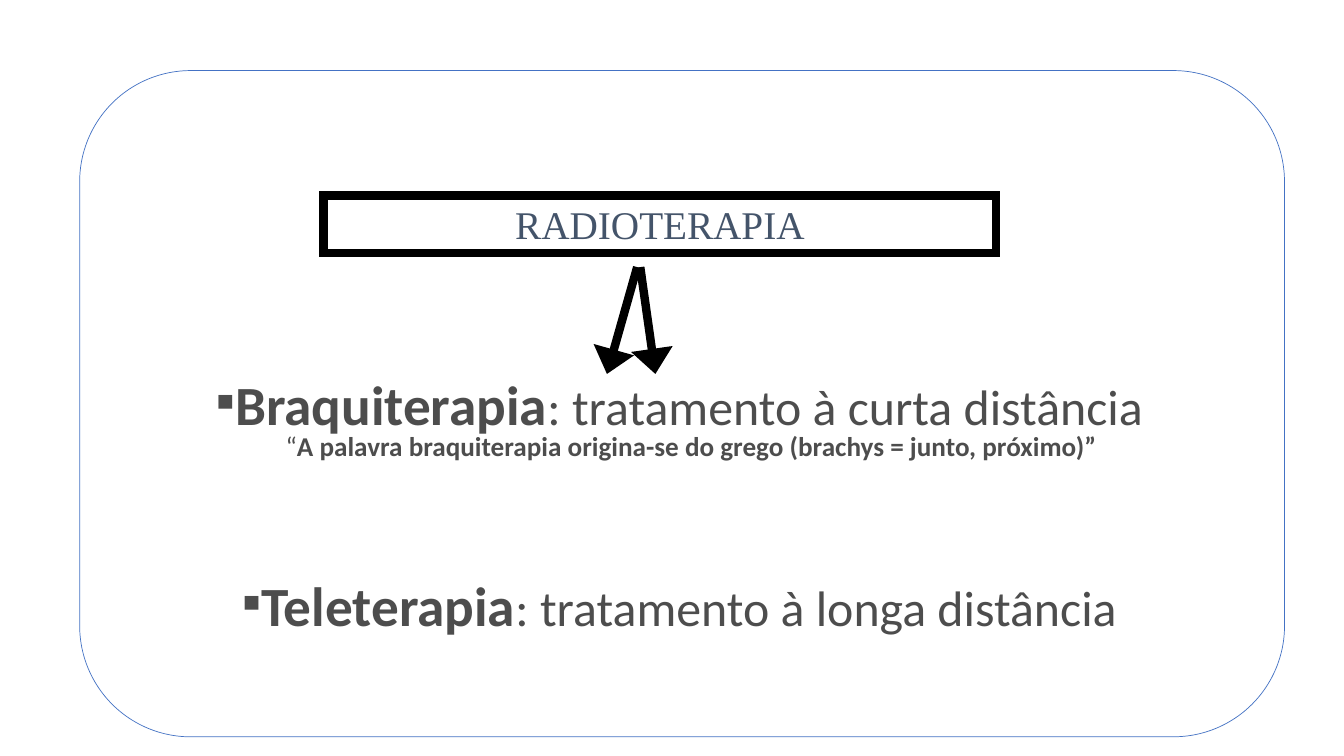
"""Build the slide on the two kinds of radiotherapy."""
from lxml import etree
from pptx import Presentation
from pptx.dml.color import RGBColor
from pptx.enum import shapes, text
from pptx.oxml import ns
from pptx.util import Inches, Pt

WHITE = RGBColor(0xFF, 0xFF, 0xFF)
BLACK = RGBColor(0, 0, 0)
BLUE = RGBColor(0x44, 0x72, 0xC4)
SLATE = RGBColor(0x44, 0x54, 0x6A)
GREY = RGBColor(0x4D, 0x4D, 0x4D)

presentation = Presentation()
presentation.slide_width = Inches(13.33)
presentation.slide_height = Inches(7.5)
slide = presentation.slides.add_slide(presentation.slide_layouts[1])
radiotherapy = slide.shapes.title
therapies = slide.placeholders[1]

border = slide.shapes.add_shape(
    shapes.MSO_SHAPE.ROUNDED_RECTANGLE,
    Inches(0.79), Inches(0.7), Inches(11.95), Inches(6.61))
border.shadow.inherit = False
border.fill.solid()
border.fill.fore_color.rgb = WHITE
border.line.color.rgb = BLUE
border.line.width = Pt(0.5)
radiotherapy._element.addprevious(border._element)

radiotherapy.left, radiotherapy.top = Inches(3.21), Inches(1.94)
radiotherapy.width, radiotherapy.height = Inches(6.67), Inches(0.57)
radiotherapy.line.color.rgb = BLACK
radiotherapy.line.width = Pt(6)
etree.SubElement(radiotherapy.line._get_or_add_ln(), ns.qn("a:miter"), lim="800000")
radiotherapy.text_frame.auto_size = text.MSO_AUTO_SIZE.NONE
heading = radiotherapy.text_frame.paragraphs[0]
heading.alignment = text.PP_ALIGN.CENTER
heading_run = heading.add_run()
heading_run.text = "RADIOTERAPIA"
heading_run.font.name = "Times New Roman"
heading_run.font.size = Pt(28)
heading_run.font.color.rgb = SLATE

for start_x, end_x in ((6.32, 6.02), (6.35, 6.5)):
    branch = slide.shapes.add_connector(
        shapes.MSO_CONNECTOR.STRAIGHT,
        Inches(start_x), Inches(2.65), Inches(end_x), Inches(3.71))
    branch.line.color.rgb = BLACK
    branch.line.width = Pt(6)
    etree.SubElement(branch.line._get_or_add_ln(), ns.qn("a:tailEnd"),
                     type="triangle", w="lg", len="med")
    etree.SubElement(branch._element.spPr, ns.qn("a:effectLst"))

therapies.left, therapies.top = Inches(1.78), Inches(3.91)
therapies.width, therapies.height = Inches(9.92), Inches(2.7)
definitions = therapies.text_frame
definitions.auto_size = text.MSO_AUTO_SIZE.NONE
definitions.margin_top = definitions.margin_bottom = 0

lines = (
    ("▪", 0, 0, (("Braquiterapia", 39.5, True),
                 (": tratamento à curta distância", 35.6, False))),
    (None, 0.24, 5, (("“", 19.4, False),
                     ("A palavra braquiterapia origina-se do grego "
                      "(brachys = junto, próximo)”", 19.4, True))),
    ("▪", 0, 96, (("Teleterapia", 39.5, True),
                  (": tratamento à longa distância", 35.6, False))),
)
for number, (bullet, indent, space, parts) in enumerate(lines):
    line = definitions.add_paragraph() if number else definitions.paragraphs[0]
    properties = line._p.get_or_add_pPr()
    properties.set("marL", str(Inches(indent)))
    properties.set("indent", "0")
    if bullet:
        etree.SubElement(properties, ns.qn("a:buChar"), char=bullet)
    else:
        etree.SubElement(properties, ns.qn("a:buNone"))
    line.alignment = text.PP_ALIGN.CENTER
    line.line_spacing = 0.6
    line.space_before = Pt(space)
    for wording, size, bold in parts:
        run = line.add_run()
        run.text = wording
        run.font.name = "Calibri"
        run.font.size = Pt(size)
        run.font.bold = bold
        run.font.color.rgb = GREY

presentation.save("out.pptx")
